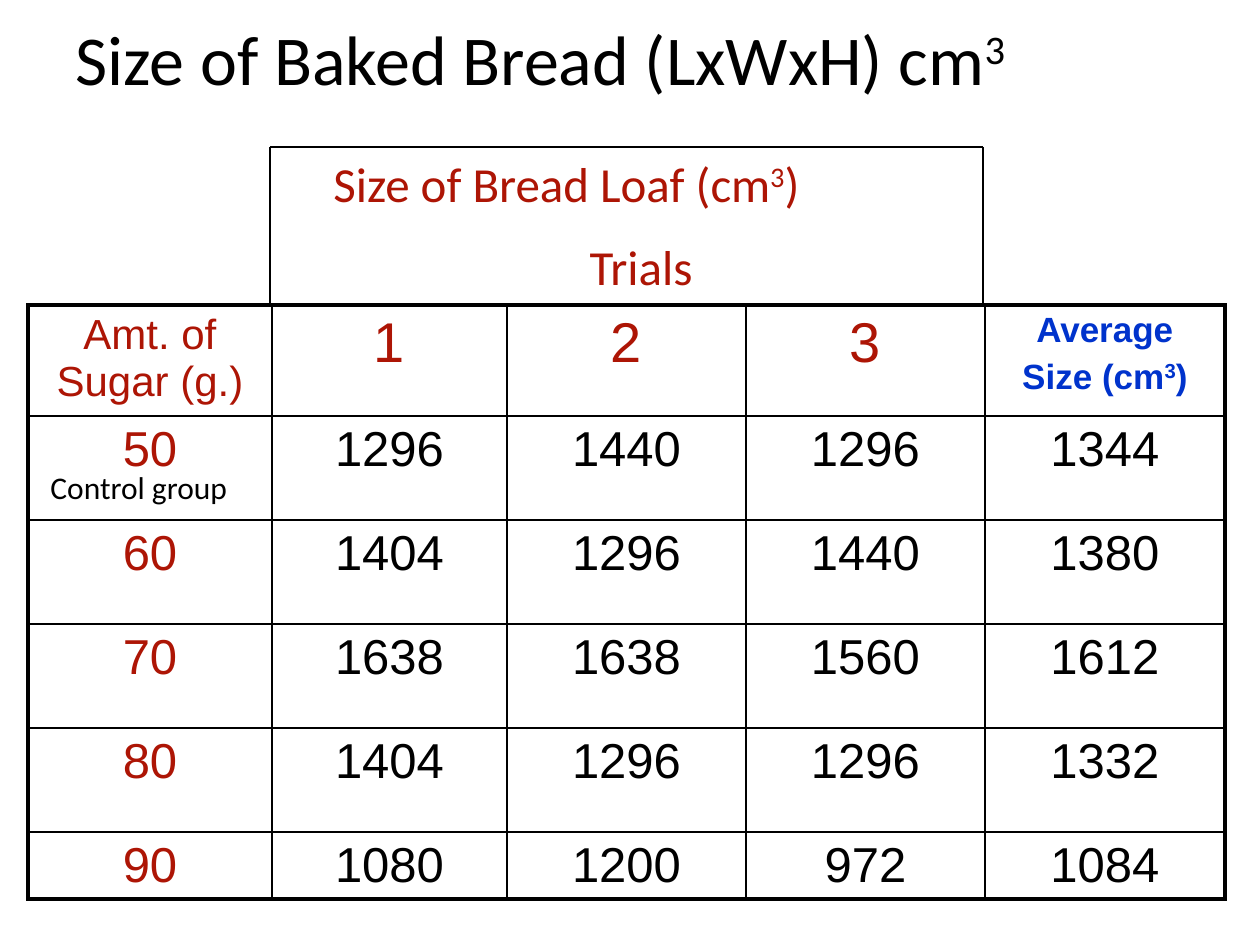
from itertools import accumulate, pairwise

from lxml.etree import SubElement
from pptx import Presentation
from pptx.dml.color import RGBColor
from pptx.enum.shapes import MSO_CONNECTOR
from pptx.enum.text import MSO_ANCHOR, PP_ALIGN
from pptx.oxml.ns import qn
from pptx.util import Emu, Pt

# Text between carets is superscript.
TITLE = "Size of Baked Bread (LxWxH) cm^3^"
BANNER = ["Size of Bread Loaf (cm^3^)", "Trials"]
CONTROL_NOTE = "Control group"
HEADINGS = ["Amt. of Sugar (g.)", "1", "2", "3", "Average\nSize (cm^3^)"]
MEASUREMENTS = [
    (50, 1296, 1440, 1296, 1344),
    (60, 1404, 1296, 1440, 1380),
    (70, 1638, 1638, 1560, 1612),
    (80, 1404, 1296, 1296, 1332),
    (90, 1080, 1200, 972, 1084),
]

BLACK, RED, BLUE = (RGBColor.from_string(c) for c in ("000000", "AD1505", "0033CC"))
THEME = {
    "title": {"name": "Calibri", "size": Pt(40), "color": BLACK},
    "banner": {"name": "Calibri", "size": Pt(28), "color": RED},
    "note": {"name": "Calibri", "size": Pt(18), "color": BLACK},
    "sugar_heading": {"name": "Arial", "size": Pt(24), "color": RED, "bold": False},
    "trial_heading": {"name": "Arial", "size": Pt(32), "color": RED, "bold": False},
    "average_heading": {"name": "Arial", "size": Pt(20), "color": BLUE, "bold": True},
    "sugar": {"name": "Arial", "size": Pt(28), "color": RED, "bold": False},
    "value": {"name": "Arial", "size": Pt(28), "color": BLACK, "bold": False},
}
GRID_LINE, OUTER_LINE, BRACKET_LINE = Pt(1), Pt(2.25), Pt(0.75)

TABLE_LEFT, TABLE_TOP = 28, 305
COLUMN_WIDTHS = [244, 235, 239, 239, 240]
ROW_HEIGHTS = [111, 104, 104, 104, 104, 67]
BRACKET_TOP = 147


def px(length):
    return Emu(round(length * 914400 / 126))


def write(paragraph, text, style, align=PP_ALIGN.LEFT, space_before=None):
    paragraph.alignment = align
    if space_before is not None:
        paragraph.space_before = space_before
    for index, part in enumerate(text.split("^")):
        if not part:
            continue
        run = paragraph.add_run()
        run.text = part
        for key, value in THEME[style].items():
            if key == "color":
                run.font.color.rgb = value
            else:
                setattr(run.font, key, value)
        if index % 2:
            run._r.get_or_add_rPr().set("baseline", "30000")


def add_text_frame(slide, *box):
    frame = slide.shapes.add_textbox(*map(px, box)).text_frame
    frame.word_wrap = True
    return frame


def set_borders(cell, widths):
    properties = cell._tc.get_or_add_tcPr()
    for side, width in widths.items():
        line = SubElement(properties, qn(f"a:ln{side}"), w=str(width))
        SubElement(SubElement(line, qn("a:solidFill")), qn("a:srgbClr"), val=str(BLACK))


def cell_style(row, column):
    if row == 0:
        return {0: "sugar_heading", 4: "average_heading"}.get(column, "trial_heading")
    return "value" if column else "sugar"


def add_results(slide):
    rows = [HEADINGS, *MEASUREMENTS]
    last_row, last_column = len(rows) - 1, len(HEADINGS) - 1
    box = (TABLE_LEFT, TABLE_TOP, sum(COLUMN_WIDTHS), sum(ROW_HEIGHTS))
    results = slide.shapes.add_table(len(rows), len(HEADINGS), *map(px, box)).table
    results.first_row = results.horz_banding = False
    for column, width in zip(results.columns, COLUMN_WIDTHS):
        column.width = px(width)
    for row, height in zip(results.rows, ROW_HEIGHTS):
        row.height = px(height)
    for r, values in enumerate(rows):
        for c, value in enumerate(values):
            cell = results.cell(r, c)
            on_edge = {"L": c == 0, "R": c == last_column, "T": r == 0, "B": r == last_row}
            set_borders(cell, {side: OUTER_LINE if edge else GRID_LINE
                               for side, edge in on_edge.items()})
            cell.fill.background()
            for i, text in enumerate(str(value).split("\n")):
                frame = cell.text_frame
                paragraph = frame.add_paragraph() if i else frame.paragraphs[0]
                write(paragraph, text, cell_style(r, c), PP_ALIGN.CENTER, Pt(4) if i else None)


def add_bracket(slide):
    """Frame the three trial columns above the table."""
    edges = list(accumulate(COLUMN_WIDTHS, initial=TABLE_LEFT))
    left, right = edges[1] - 2, edges[4] - 2
    corners = [(left, TABLE_TOP), (left, BRACKET_TOP), (right, BRACKET_TOP), (right, TABLE_TOP)]
    for start, end in pairwise(corners):
        side = slide.shapes.add_connector(MSO_CONNECTOR.STRAIGHT, *map(px, start + end))
        side.line.color.rgb = BLACK
        side.line.width = BRACKET_LINE
        SubElement(side._element.spPr, qn("a:effectLst"))


def main():
    deck = Presentation()
    deck.slide_width, deck.slide_height = px(1260), px(945)
    slide = deck.slides.add_slide(deck.slide_layouts[5])

    title = slide.shapes.title
    title.left, title.top, title.width, title.height = map(px, (63, 0, 1134, 126))
    title.text_frame.vertical_anchor = MSO_ANCHOR.MIDDLE
    title.text_frame.paragraphs[0].line_spacing = 0.9
    write(title.text_frame.paragraphs[0], TITLE, "title")

    add_results(slide)
    add_bracket(slide)

    banner = add_text_frame(slide, 321, BRACKET_TOP, 640, 160)
    write(banner.paragraphs[0], BANNER[0], "banner")
    write(banner.add_paragraph(), BANNER[1], "banner", PP_ALIGN.CENTER, Pt(14))

    note = add_text_frame(slide, 38, 462, 231, 50)
    write(note.paragraphs[0], CONTROL_NOTE, "note")

    deck.save("out.pptx")


if __name__ == "__main__":
    main()
